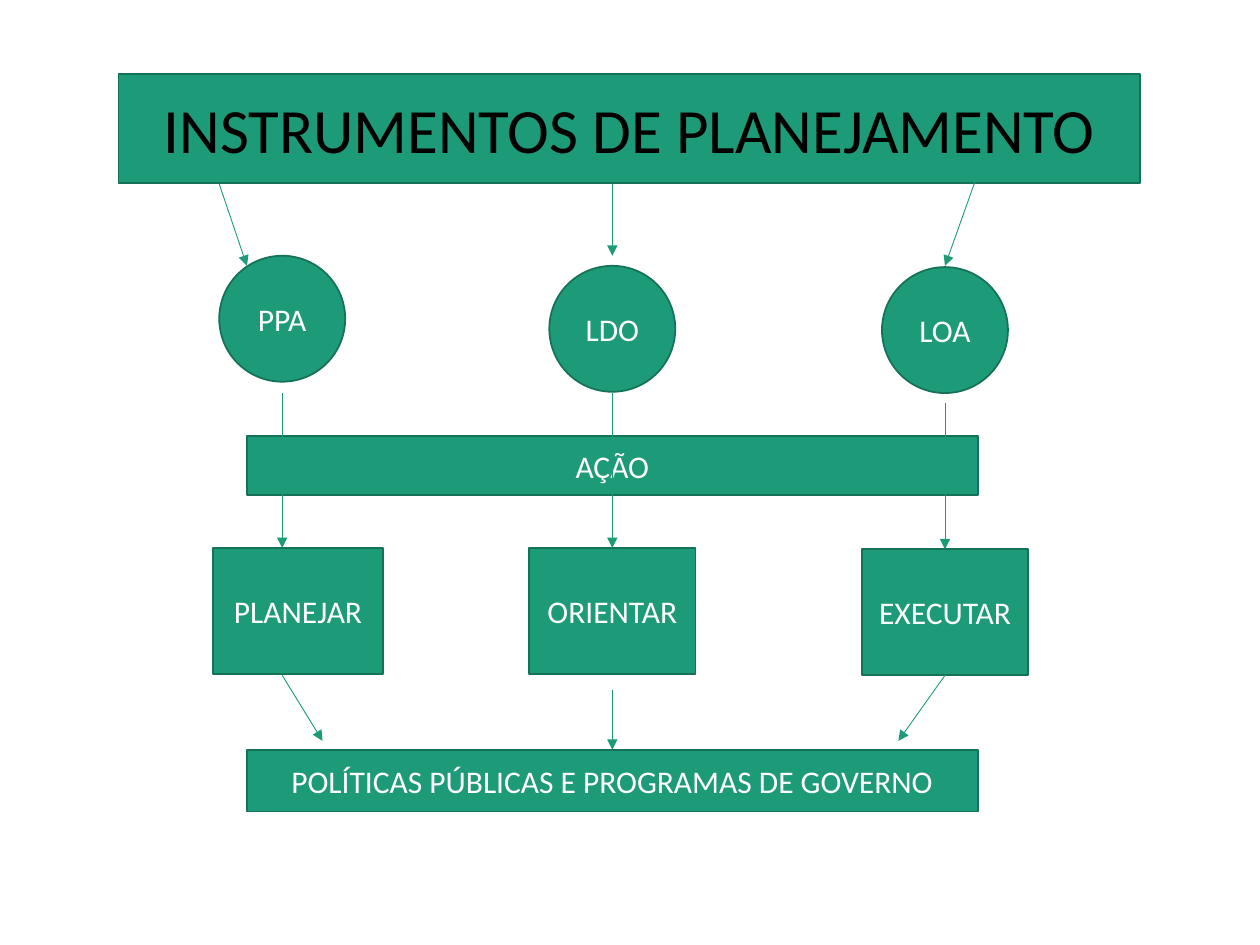
import pptx
import pptx.util
import pptx.oxml.ns
from lxml import etree
from pptx.dml.color import RGBColor
from pptx.enum.shapes import MSO_CONNECTOR, MSO_SHAPE
from pptx.enum.text import MSO_ANCHOR, MSO_AUTO_SIZE, PP_ALIGN
from pptx.util import Inches

GREEN = RGBColor(0x1D, 0x9A, 0x78)
DARK_GREEN = RGBColor(0x15, 0x72, 0x59)
WHITE = RGBColor(0xFF, 0xFF, 0xFF)
BLACK = RGBColor(0x00, 0x00, 0x00)
FONT = "Calibri"

# Content: text and box (left, top, width, height) in inches
TITLE = ("INSTRUMENTOS DE PLANEJAMENTO", (0.94, 0.59, 8.11, 0.86))
CIRCLE_SIZE = 1
INSTRUMENTS = [("PPA", 1.74, 2.03), ("LDO", 4.36, 2.11), ("LOA", 7, 2.12)]
BOXES = [
    ("AÇÃO", (1.96, 3.46, 5.8, 0.47)),
    ("PLANEJAR", (1.69, 4.35, 1.35, 1)),
    ("ORIENTAR", (4.2, 4.35, 1.32, 1)),
    ("EXECUTAR", (6.84, 4.36, 1.32, 1)),
    ("POLÍTICAS PÚBLICAS E PROGRAMAS DE GOVERNO", (1.96, 5.95, 5.8, 0.49)),
]

# Arrows: start, end, box joined at its bottom, box joined at its top
LEFT, MIDDLE, RIGHT = (left + CIRCLE_SIZE / 2 for _, left, _ in INSTRUMENTS)
ARROWS = [
    ((1.74, 1.46), (1.96, 2.11), None, None),
    ((MIDDLE, 1.46), (MIDDLE, 2.03), None, None),
    ((7.76, 1.38), (RIGHT, 2.11), None, None),
    ((LEFT, 3.12), (LEFT, 4.35), None, None),
    ((MIDDLE, 3.12), (MIDDLE, 4.35), None, "ORIENTAR"),
    ((RIGHT, 3.2), (RIGHT, 4.35), None, "EXECUTAR"),
    ((LEFT, 5.36), (2.56, 5.88), None, None),
    ((MIDDLE, 5.48), (MIDDLE, 5.95), None, BOXES[-1][0]),
    ((RIGHT, 5.36), (7.13, 5.88), "EXECUTAR", None),
]


def format_shape(shape, text, size, color):
    shape.fill.solid()
    shape.fill.fore_color.rgb = GREEN
    shape.line.color.rgb = DARK_GREEN
    shape.line.width = pptx.util.Pt(1)
    frame = shape.text_frame
    frame.text = text
    frame.word_wrap = True
    frame.auto_size = MSO_AUTO_SIZE.NONE
    frame.vertical_anchor = MSO_ANCHOR.MIDDLE
    paragraph = frame.paragraphs[0]
    paragraph.alignment = PP_ALIGN.CENTER
    font = paragraph.runs[0].font
    font.name = FONT
    font.size = pptx.util.Pt(size)
    font.color.rgb = color


def add_node(slide, kind, text, box):
    shape = slide.shapes.add_shape(kind, *map(Inches, box))
    shape.shadow.inherit = False
    format_shape(shape, text, 18, WHITE)
    return shape


def add_arrow(slide, start, end):
    connector = slide.shapes.add_connector(
        MSO_CONNECTOR.STRAIGHT, *map(Inches, start + end))
    connector.line.color.rgb = GREEN
    connector.line.width = pptx.util.Pt(0.5)
    qn = pptx.oxml.ns.qn
    etree.SubElement(connector.line._get_or_add_ln(), qn("a:tailEnd"), type="triangle")
    etree.SubElement(connector._element.spPr, qn("a:effectLst"))
    return connector


def main():
    presentation = pptx.Presentation()
    presentation.slide_width = Inches(10)
    presentation.slide_height = Inches(7.5)
    slide = presentation.slides.add_slide(presentation.slide_layouts[5])

    # Title bar
    title = slide.shapes.title
    text, box = TITLE
    title.left, title.top, title.width, title.height = map(Inches, box)
    format_shape(title, text, 36, BLACK)

    # Instruments and the boxes below them
    for text, left, top in INSTRUMENTS:
        add_node(slide, MSO_SHAPE.OVAL, text, (left, top, CIRCLE_SIZE, CIRCLE_SIZE))
    boxes = {text: add_node(slide, MSO_SHAPE.RECTANGLE, text, box)
             for text, box in BOXES}

    # Arrows
    for start, end, source, target in ARROWS:
        arrow = add_arrow(slide, start, end)
        if source:
            arrow.begin_connect(boxes[source], 2)
        if target:
            arrow.end_connect(boxes[target], 0)

    presentation.save("out.pptx")


if __name__ == "__main__":
    main()
